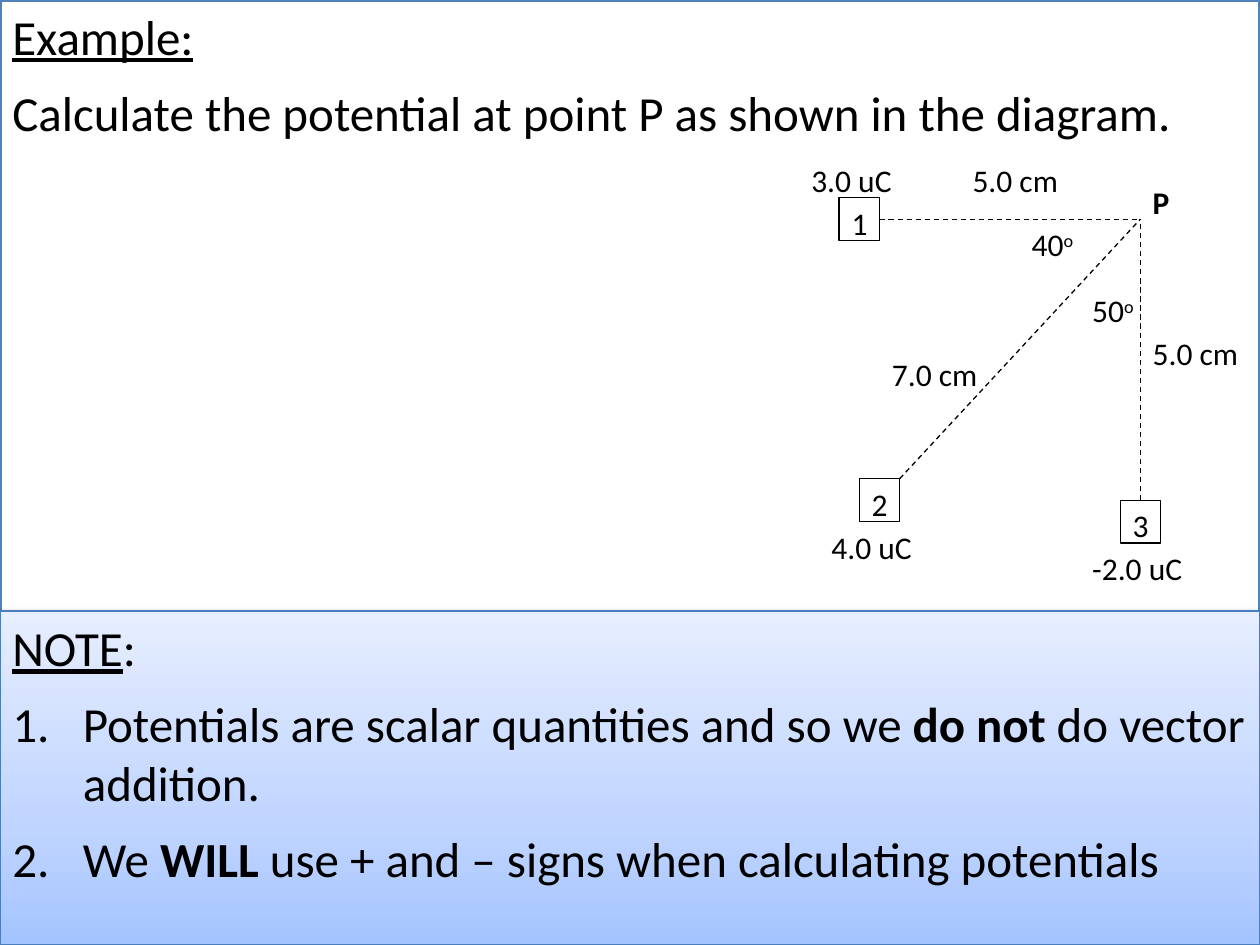
from copy import deepcopy
from lxml.etree import SubElement
from pptx import Presentation
from pptx.dml.color import RGBColor
from pptx.enum.dml import MSO_LINE_DASH_STYLE as Dash
from pptx.enum.shapes import MSO_CONNECTOR_TYPE as Connector, MSO_SHAPE as Shape
from pptx.enum.text import MSO_ANCHOR as Anchor, PP_ALIGN as Align
from pptx.oxml.ns import qn
from pptx.util import Inches, Pt

BLACK = RGBColor(0x00, 0x00, 0x00)
WHITE = RGBColor(0xFF, 0xFF, 0xFF)
FRAME_BLUE = RGBColor(0x4F, 0x81, 0xBD)
NOTE_EDGE = RGBColor(0x4B, 0x7E, 0xBC)
NOTE_STOPS = [
    (0, RGBColor(0xA4, 0xC4, 0xFF)),
    (0.35, RGBColor(0xBF, 0xD4, 0xFF)),
    (1, RGBColor(0xE6, 0xEE, 0xFF)),
]
FONT = "Calibri"
BODY_SIZE = 28
LABEL_SIZE = 18


def write_para(frame, *runs, size=BODY_SIZE, first=False, numbered=False):
    """Write one paragraph from (text, style) runs and return it."""
    para = frame.paragraphs[0] if first else frame.add_paragraph()
    para.alignment = Align.LEFT
    para.space_after = Pt(10)
    for text, style in runs:
        span = para.add_run()
        span.text = text
        font = span.font
        font.name, font.size, font.color.rgb = FONT, Pt(size), BLACK
        font.bold = style == "bold"
        font.underline = style == "underline"
        if style == "superscript":
            span._r.get_or_add_rPr().set("baseline", "30000")
    if numbered:
        props = para._p.get_or_add_pPr()
        props.set("marL", str(Inches(0.56)))
        props.set("indent", str(-Inches(0.56)))
        SubElement(props, qn("a:buFont"), typeface="+mj-lt")
        SubElement(props, qn("a:buAutoNum"), type="arabicPeriod")
    return para


def add_panel(shapes, box, edge, weight):
    """Add a white, top-anchored rectangle with the given outline."""
    panel = shapes.add_shape(Shape.RECTANGLE, *map(Inches, box))
    panel.shadow.inherit = False
    panel.fill.solid()
    panel.fill.fore_color.rgb = WHITE
    panel.line.color.rgb = edge
    panel.line.width = Pt(weight)
    panel.text_frame.word_wrap = True
    panel.text_frame.vertical_anchor = Anchor.TOP
    return panel


def add_label(shapes, box, *runs):
    """Add a small text label made of (text, style) runs."""
    frame = shapes.add_textbox(*map(Inches, box)).text_frame
    frame.word_wrap = True
    write_para(frame, *runs, size=LABEL_SIZE, first=True)


def add_dashed_line(shapes, start, end):
    """Add a thin dashed line between two points."""
    line = shapes.add_connector(Connector.STRAIGHT, *map(Inches, start + end))
    line.line.color.rgb = BLACK
    line.line.width = Pt(0.75)
    line.line.dash_style = Dash.DASH
    SubElement(line._element.spPr, qn("a:effectLst"))


def add_example(page, box):
    """Place the framed question."""
    frame = add_panel(page.shapes, box, FRAME_BLUE, 2).text_frame
    write_para(frame, ("Example:", "underline"), first=True)
    question = "Calculate the potential at point P as shown in the diagram."
    write_para(frame, (question, None))


def add_diagram(page, left, top):
    """Place the three charges around point P as one group."""
    shapes = page.shapes.add_group_shape().shapes
    point = (left + 2.71, top + 0.51)
    side, height = 0.32, 0.34
    charges = [
        ("1", 0.32, 0.34, (side, height / 2)),
        ("2", 0.48, 2.57, (side, 0)),
        ("3", 2.55, 2.74, (side / 2, 0)),
    ]
    for number, x, y, (dx, dy) in charges:
        x, y = left + x, top + y
        add_dashed_line(shapes, (x + dx, y + dy), point)
        charge = add_panel(shapes, (x, y, side, height), BLACK, 0.75)
        write_para(charge.text_frame, (number, None), size=LABEL_SIZE, first=True)

    labels = [
        ("3.0 uC", 0, 0, 0.95),
        ("5.0 cm", 1.28, 0, 0.95),
        ("7.0 cm", 0.64, 1.54, 0.95),
        ("5.0 cm", 2.71, 1.37, 0.95),
        ("4.0 uC", 0.16, 2.91, 0.95),
        ("-2.0 uC", 2.23, 3.08, 1.11),
    ]
    for text, x, y, width in labels:
        add_label(shapes, (left + x, top + y, width, 0.51), (text, None))
    for degrees, x, y in [("40", 1.75, 0.51), ("50", 2.23, 1.03)]:
        angle_box = (left + x, top + y, 0.64, 0.51)
        add_label(shapes, angle_box, (degrees, None), ("o", "superscript"))
    add_label(shapes, (point[0], top + 0.17, 0.32, 0.51), ("P", "bold"))


def shade_note(panel):
    """Give the note its blue gradient and soft shadow."""
    panel.fill.gradient()
    panel.fill.gradient_angle = 90
    props = panel._element.spPr
    stop_list = props.find(qn("a:gradFill")).find(qn("a:gsLst"))
    stop_list.append(deepcopy(stop_list[0]))
    for stop, (position, color) in zip(panel.fill.gradient_stops, NOTE_STOPS):
        stop.position = position
        stop.color.rgb = color
    shadow = SubElement(
        props.find(qn("a:effectLst")), qn("a:outerShdw"),
        blurRad=str(Pt(3.1)), dist=str(Pt(1.6)), dir="5400000", rotWithShape="0",
    )
    shade = SubElement(shadow, qn("a:srgbClr"), val=str(BLACK))
    SubElement(shade, qn("a:alpha"), val="38000")


def add_note(page, box):
    """Place the shaded note with its numbered points."""
    panel = add_panel(page.shapes, box, NOTE_EDGE, 0.75)
    shade_note(panel)
    frame = panel.text_frame
    write_para(frame, ("NOTE", "underline"), (":", None), first=True)
    points = [
        ("Potentials are scalar quantities and so we ", "do not ",
         "do vector addition."),
        ("We ", "WILL", " use + and – signs when calculating potentials"),
    ]
    for before, strong, after in points:
        runs = (before, None), (strong, "bold"), (after, None)
        write_para(frame, *runs, numbered=True)


def main():
    """Build the deck and save it."""
    deck = Presentation()
    deck.slide_width, deck.slide_height = Inches(10), Inches(7.5)
    page = deck.slides.add_slide(deck.slide_layouts[6])
    add_example(page, (0, 0, 10, 7.5))
    add_diagram(page, 6.34, 1.23)
    add_note(page, (0, 4.85, 10, 2.65))
    deck.save("out.pptx")


if __name__ == "__main__":
    main()
